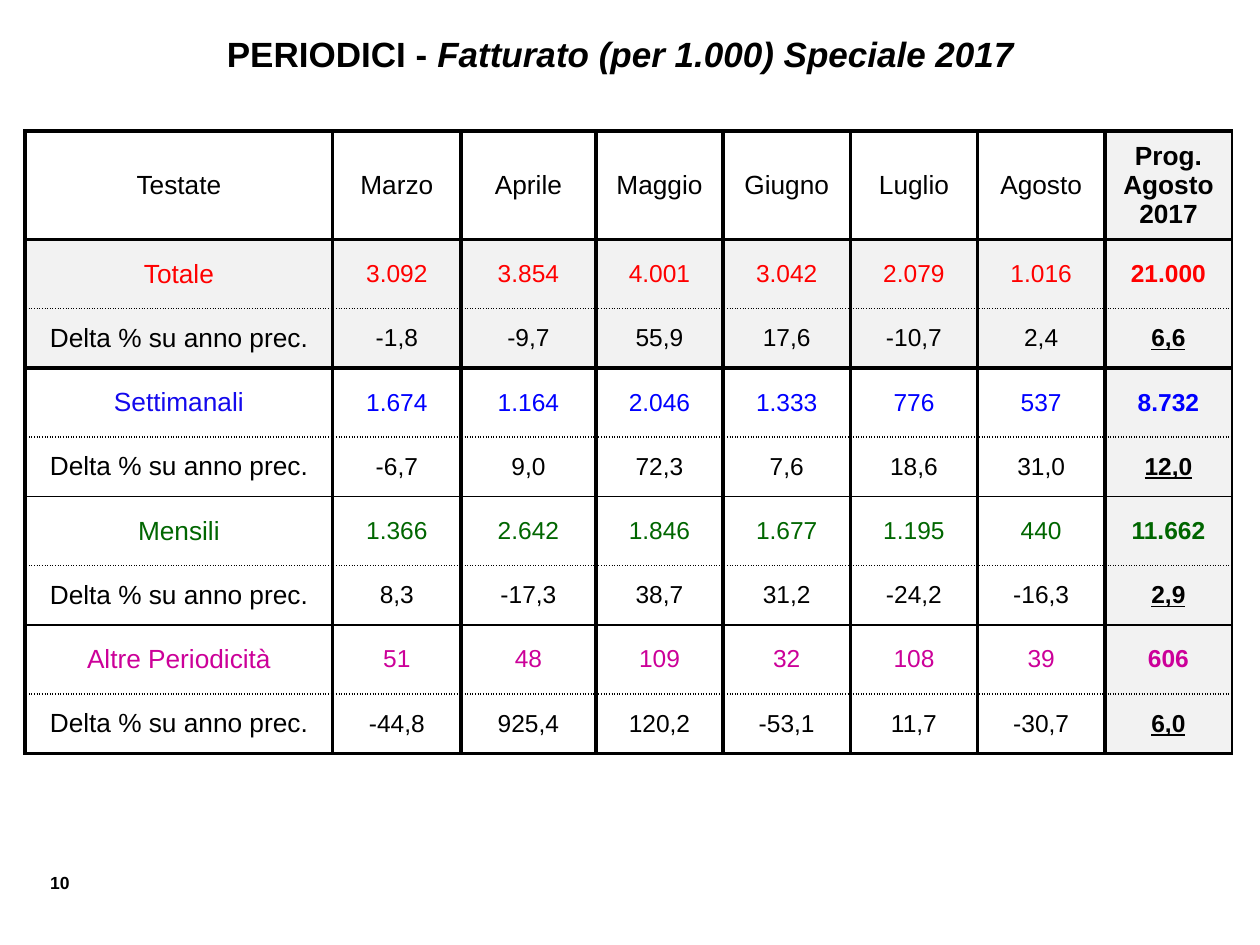
from lxml import etree
from pptx import Presentation
from pptx.dml.color import RGBColor
from pptx.enum.text import MSO_ANCHOR, PP_ALIGN
from pptx.oxml.ns import qn
from pptx.util import Inches, Pt

CENTER, RIGHT = PP_ALIGN.CENTER, PP_ALIGN.RIGHT
MIDDLE = MSO_ANCHOR.MIDDLE

BLACK, GREY = "000000", "F2F2F2"
DELTA = "Delta % su anno prec."

# Content
TITLE = [("PERIODICI - ", False), ("Fatturato (per 1.000) Speciale 2017", True)]
PAGE_NUMBER = "10"
HEADER = ["Testate", "Marzo", "Aprile", "Maggio", "Giugno", "Luglio", "Agosto",
          "Prog.\nAgosto 2017"]
# Each group: name, name colour, value colour, revenue, change on the year before
GROUPS = [
    ("Totale", "FF0000", "FF0000",
     ["3.092", "3.854", "4.001", "3.042", "2.079", "1.016", "21.000"],
     ["-1,8", "-9,7", "55,9", "17,6", "-10,7", "2,4", "6,6"]),
    ("Settimanali", "1409ED", "0000FF",
     ["1.674", "1.164", "2.046", "1.333", "776", "537", "8.732"],
     ["-6,7", "9,0", "72,3", "7,6", "18,6", "31,0", "12,0"]),
    ("Mensili", "006600", "006600",
     ["1.366", "2.642", "1.846", "1.677", "1.195", "440", "11.662"],
     ["8,3", "-17,3", "38,7", "31,2", "-24,2", "-16,3", "2,9"]),
    ("Altre Periodicità", "CC0099", "CC0099",
     ["51", "48", "109", "32", "108", "39", "606"],
     ["-44,8", "925,4", "120,2", "-53,1", "11,7", "-30,7", "6,0"]),
]

# Table geometry and rules (width in points, dash)
COLUMN_WIDTHS = [2.44, 1.02, 1.07] + [1.01] * 5
ROW_HEIGHTS = [0.86] + [0.55, 0.47] * len(GROUPS)
THICK, THIN, DOTTED = (2.25, "solid"), (1, "solid"), (1, "sysDot")
ROW_RULES = [THICK, THICK, DOTTED, THICK, DOTTED, THIN, DOTTED, THIN, DOTTED, THICK]
COLUMN_RULES = [THICK] * len(HEADER) + [THIN]


def color(value):
    return RGBColor.from_string(value)


def add_span(para, text, size, ink=BLACK, bold=False, italic=False, underline=False):
    span = para.add_run()
    span.text = text
    font = span.font
    font.name, font.size = "Arial", Pt(size)
    font.bold, font.italic, font.underline = bold, italic, underline
    font.color.rgb = color(ink)


def add_box(page, left, top, width, height, align):
    box = page.shapes.add_textbox(*map(Inches, (left, top, width, height)))
    box.text_frame.word_wrap = True
    para = box.text_frame.paragraphs[0]
    para.alignment = align
    return para


def set_borders(cell, rules):
    props = cell._tc.get_or_add_tcPr()
    for place, (side, (width, dash)) in enumerate(zip("LRTB", rules)):
        line = etree.Element(qn(f"a:ln{side}"), w=str(Pt(width)))
        fill = etree.SubElement(line, qn("a:solidFill"))
        etree.SubElement(fill, qn("a:srgbClr"), val=BLACK)
        etree.SubElement(line, qn("a:prstDash"), val=dash)
        props.insert(place, line)


def fill_cell(cell, row, column, text, ink):
    is_label = row == 0 or column == 0
    is_total = column == len(HEADER) - 1
    is_delta = row > 0 and row % 2 == 0

    # Wide margins for labels, none for numbers
    side, edge = (0.1, 0.05) if is_label else (0, 0)
    if row == column == 0:
        side = 0.05
    cell.margin_left = cell.margin_right = Inches(side)
    cell.margin_top = cell.margin_bottom = Inches(edge)
    cell.vertical_anchor = MIDDLE

    if is_total or row in (1, 2):
        cell.fill.solid()
        cell.fill.fore_color.rgb = color(GREY)
    else:
        cell.fill.background()
    set_borders(cell, [COLUMN_RULES[column], COLUMN_RULES[column + 1],
                       ROW_RULES[row], ROW_RULES[row + 1]])

    para = cell.text_frame.paragraphs[0]
    para.alignment = CENTER
    for number, part in enumerate(text.split("\n")):
        if number:
            para.add_line_break()
        add_span(para, part, 15 if is_label else 14, ink, bold=is_total,
                 underline=is_total and is_delta)


def add_revenue_table(page):
    rows = [[(text, BLACK) for text in HEADER]]
    for name, name_ink, value_ink, revenue, change in GROUPS:
        rows.append([(name, name_ink)] + [(value, value_ink) for value in revenue])
        rows.append([(text, BLACK) for text in [DELTA] + change])

    frame = page.shapes.add_table(
        len(rows), len(HEADER), Inches(0.2), Inches(1.04),
        Inches(sum(COLUMN_WIDTHS)), Inches(sum(ROW_HEIGHTS)))
    table = frame.table
    table.first_row = table.horz_banding = False
    for column, width in zip(table.columns, COLUMN_WIDTHS):
        column.width = Inches(width)
    for line, height in zip(table.rows, ROW_HEIGHTS):
        line.height = Inches(height)
    for row, entries in enumerate(rows):
        for column, (text, ink) in enumerate(entries):
            fill_cell(table.cell(row, column), row, column, text, ink)


def main():
    deck = Presentation()
    deck.slide_width, deck.slide_height = Inches(10), Inches(7.5)
    page = deck.slides.add_slide(deck.slide_layouts[6])

    # Page number
    add_span(add_box(page, 0.19, 6.87, 0.46, 0.27, RIGHT), PAGE_NUMBER, 10, bold=True)

    add_revenue_table(page)

    # Title
    heading = add_box(page, 0.2, 0.21, 9.45, 0.44, CENTER)
    for text, italic in TITLE:
        add_span(heading, text, 20, bold=True, italic=italic)

    deck.save("out.pptx")


if __name__ == "__main__":
    main()
